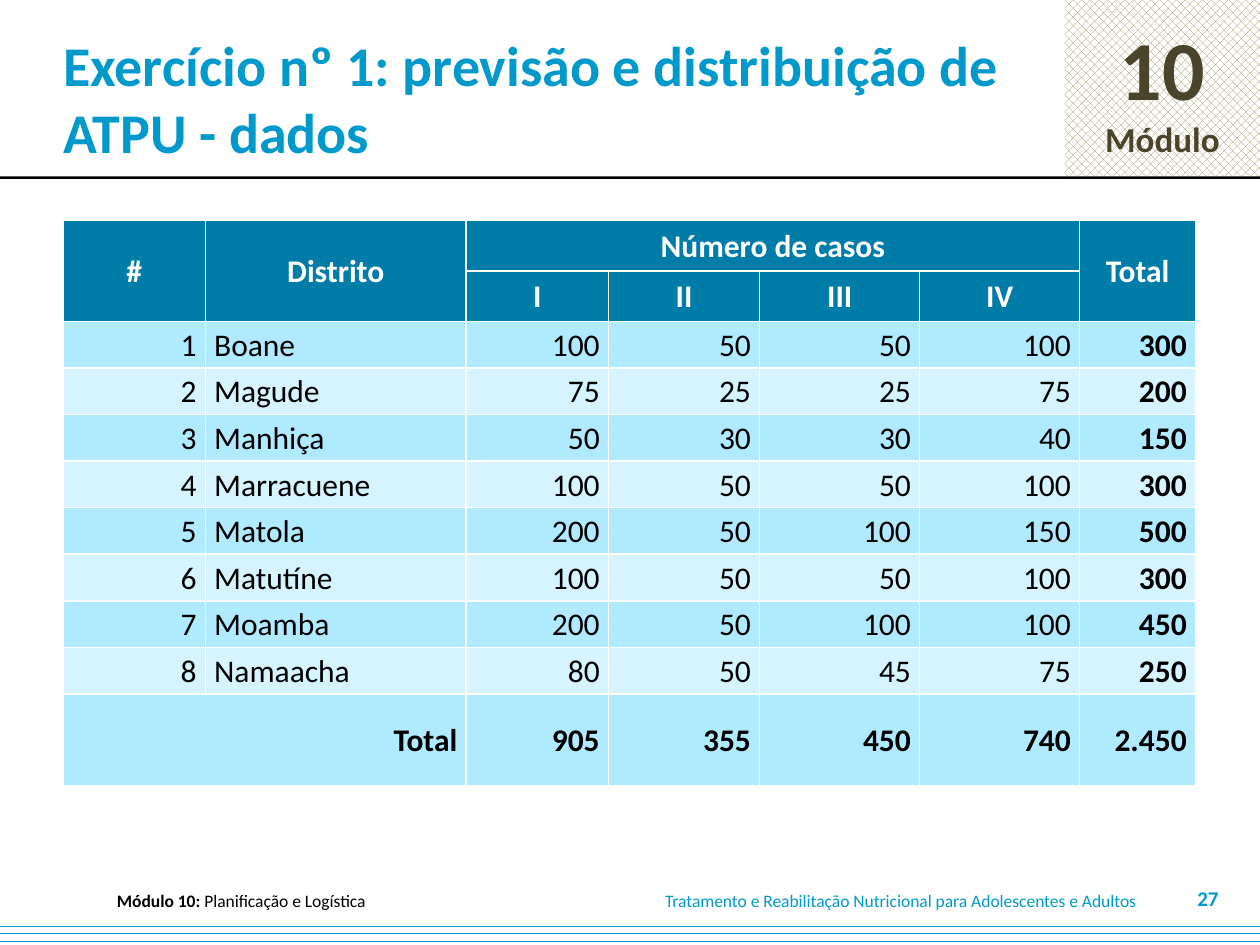
import lxml.etree
import pptx
import pptx.dml.color
import pptx.enum.dml
import pptx.enum.shapes
import pptx.enum.text
import pptx.oxml.ns
import pptx.util

Inches = pptx.util.Inches
Pt = pptx.util.Pt
RGBColor = pptx.dml.color.RGBColor
Pattern = pptx.enum.dml.MSO_PATTERN
Align = pptx.enum.text.PP_ALIGN
Middle = pptx.enum.text.MSO_ANCHOR.MIDDLE

FONT = "Calibri"
BLUE = RGBColor(0x00, 0x99, 0xCC)
HEADER_BLUE = RGBColor(0x00, 0x7C, 0xA8)
BAND_DARK = RGBColor(0xAF, 0xEA, 0xFF)
BAND_LIGHT = RGBColor(0xD5, 0xF4, 0xFF)
BROWN = RGBColor(0x4A, 0x45, 0x2A)
TAN = RGBColor(0x94, 0x8A, 0x54)
BLACK = RGBColor(0, 0, 0)
WHITE = RGBColor(0xFF, 0xFF, 0xFF)

COLUMN_WIDTHS = [1.13, 2.07, 1.13, 1.2, 1.27, 1.27, 0.92]
ROW_HEIGHTS = [0.4] * 2 + [0.37] * 8 + [0.73]
HEADER_ROWS = [
    ["#", "Distrito", "Número de casos", "", "", "", "Total"],
    ["", "", "I", "II", "III", "IV", ""],
]
DISTRICT_ROWS = [
    ["1", "Boane", "100", "50", "50", "100", "300"],
    ["2", "Magude", "75", "25", "25", "75", "200"],
    ["3", "Manhiça", "50", "30", "30", "40", "150"],
    ["4", "Marracuene", "100", "50", "50", "100", "300"],
    ["5", "Matola", "200", "50", "100", "150", "500"],
    ["6", "Matutíne", "100", "50", "50", "100", "300"],
    ["7", "Moamba", "200", "50", "100", "100", "450"],
    ["8", "Namaacha", "80", "50", "45", "75", "250"],
]
TOTAL_ROW = ["Total", "", "905", "355", "450", "740", "2.450"]
MERGES = [(0, 0, 1, 0), (0, 1, 1, 1), (0, 2, 0, 5), (0, 6, 1, 6), (10, 0, 10, 1)]


def add_run(paragraph, text, size, color, bold=False):
    """Append one formatted run to a paragraph."""
    run = paragraph.add_run()
    run.text = text
    run.font.name = FONT
    run.font.size = Pt(size)
    run.font.bold = bold
    run.font.color.rgb = color


def add_rectangle(slide, box):
    """Add a rectangle without outline or shadow."""
    shape = slide.shapes.add_shape(pptx.enum.shapes.MSO_SHAPE.RECTANGLE, *map(Inches, box))
    shape.shadow.inherit = False
    shape.line.fill.background()
    return shape


def fill_pattern(shape, pattern, color):
    """Fill a shape with a coloured pattern on white."""
    shape.fill.patterned()
    shape.fill.pattern = pattern
    shape.fill.fore_color.rgb = color
    shape.fill.back_color.rgb = WHITE


def add_badge(slide, box):
    """Add the patterned module number badge."""
    badge = add_rectangle(slide, box)
    fill_pattern(badge, Pattern.PERCENT_50, TAN)
    frame = badge.text_frame
    frame.vertical_anchor = Middle
    for paragraph, text, size in (
        (frame.paragraphs[0], "10", 48),
        (frame.add_paragraph(), "Módulo", 20),
    ):
        paragraph.alignment = Align.CENTER
        add_run(paragraph, text, size, BROWN, True)


def add_title(slide, box):
    """Place and format the title placeholder."""
    title = slide.shapes.title
    title.left, title.top, title.width, title.height = map(Inches, box)
    frame = title.text_frame
    frame.auto_size = pptx.enum.text.MSO_AUTO_SIZE.NONE
    frame.vertical_anchor = Middle
    frame.margin_left = Inches(0.5)
    paragraph = frame.paragraphs[0]
    paragraph.alignment = Align.LEFT
    add_run(paragraph, "Exercício nº 1: previsão e distribuição de ATPU - dados", 32, BLUE, True)


def add_text(slide, box, runs, alignment=Align.LEFT):
    """Add a single-line text box made of the given runs."""
    frame = slide.shapes.add_textbox(*map(Inches, box)).text_frame
    frame.word_wrap = True
    frame.vertical_anchor = Middle
    frame.margin_top = frame.margin_bottom = 0
    paragraph = frame.paragraphs[0]
    paragraph.alignment = alignment
    for run in runs:
        add_run(paragraph, *run)


def add_footer(slide, box):
    """Add the footer texts, the slide number and the striped band."""
    left, top, width, height = box
    add_text(slide, (left + 0.83, top + 0.05, 4.32, 0.2),
             [("Módulo 10: ", 10, BLACK, True), ("Planificação e Logística", 10, BLACK)])
    add_text(slide, (left + 5.18, top + 0.05, 4.05, 0.2),
             [("Tratamento e Reabilitação Nutricional para Adolescentes e Adultos", 10, BLUE)])
    add_text(slide, (left + 9.27, top, 0.5, 0.25), [("27", 12, BLUE, True)], Align.RIGHT)
    band = add_rectangle(slide, (left, top + 0.29, width, height - 0.29))
    fill_pattern(band, Pattern.DASHED_HORIZONTAL, BLUE)


def set_borders(cell):
    """Give all four sides of a cell a thin white line."""
    properties = cell._tc.get_or_add_tcPr()
    qn = pptx.oxml.ns.qn
    for position, side in enumerate(("a:lnL", "a:lnR", "a:lnT", "a:lnB")):
        line = lxml.etree.Element(qn(side), w=str(Pt(1)))
        fill = lxml.etree.SubElement(line, qn("a:solidFill"))
        lxml.etree.SubElement(fill, qn("a:srgbClr"), val=str(WHITE))
        properties.insert(position, line)


def format_cell(cell, text, fill, color, bold, alignment):
    """Fill, border and write one table cell."""
    cell.fill.solid()
    cell.fill.fore_color.rgb = fill
    set_borders(cell)
    cell.vertical_anchor = Middle
    cell.margin_left = cell.margin_right = Inches(0.07)
    cell.margin_top = cell.margin_bottom = 0
    paragraph = cell.text_frame.paragraphs[0]
    paragraph.alignment = alignment
    paragraph.line_spacing = 1.05
    paragraph.space_after = Pt(10)
    if text:
        add_run(paragraph, text, 18, color, bold)


def add_case_table(slide, box):
    """Add the table of cases by district."""
    rows = HEADER_ROWS + DISTRICT_ROWS + [TOTAL_ROW]
    table = slide.shapes.add_table(len(rows), len(COLUMN_WIDTHS), *map(Inches, box)).table
    table.first_row = table.horz_banding = False
    for column, width in zip(table.columns, COLUMN_WIDTHS):
        column.width = Inches(width)
    for row, height in zip(table.rows, ROW_HEIGHTS):
        row.height = Inches(height)
    for top, left, bottom, right in MERGES:
        table.cell(top, left).merge(table.cell(bottom, right))
    last_row, last_column = len(rows) - 1, len(COLUMN_WIDTHS) - 1
    for row_index, values in enumerate(rows):
        header = row_index < len(HEADER_ROWS)
        band = BAND_LIGHT if row_index % 2 else BAND_DARK
        for column_index, text in enumerate(values):
            bold = header or row_index == last_row or column_index == last_column
            if header:
                alignment = Align.CENTER
            elif column_index == 1:
                alignment = Align.JUSTIFY
            else:
                alignment = Align.RIGHT
            format_cell(table.cell(row_index, column_index), text,
                        HEADER_BLUE if header else band,
                        WHITE if header else BLACK, bold, alignment)


def main():
    """Build the slide and save it."""
    presentation = pptx.Presentation()
    presentation.slide_width, presentation.slide_height = Inches(10), Inches(7.5)
    slide = presentation.slides.add_slide(presentation.slide_layouts[5])
    add_badge(slide, (8.45, 0, 1.55, 1.4))
    rule = add_rectangle(slide, (0, 1.4, 10, 0.02))
    rule.fill.solid()
    rule.fill.fore_color.rgb = BLACK
    add_title(slide, (0, 0, 8.58, 1.55))
    add_case_table(slide, (0.5, 1.75, 9, 4.5))
    add_footer(slide, (0, 7, 10, 0.5))
    presentation.save("out.pptx")


if __name__ == "__main__":
    main()
